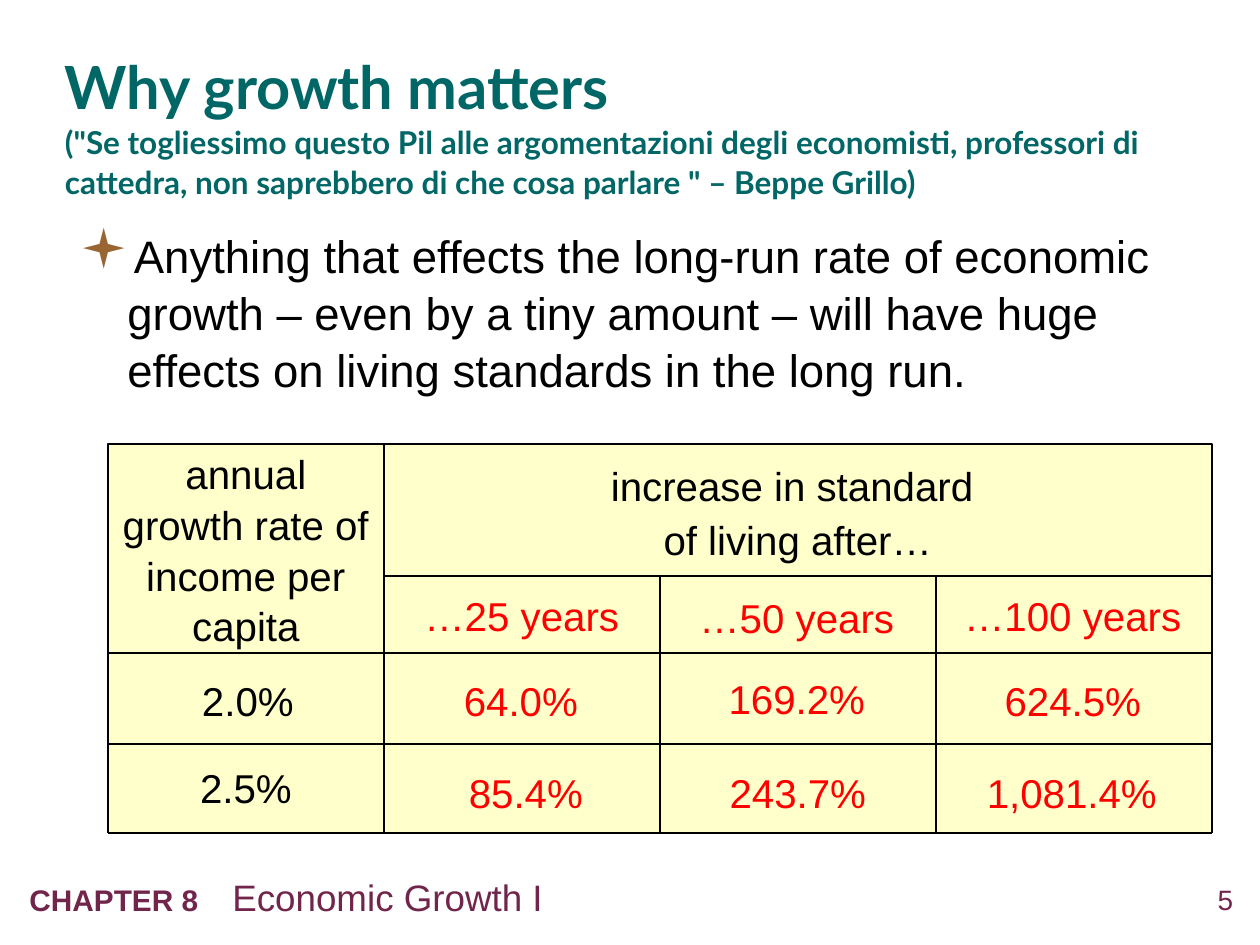
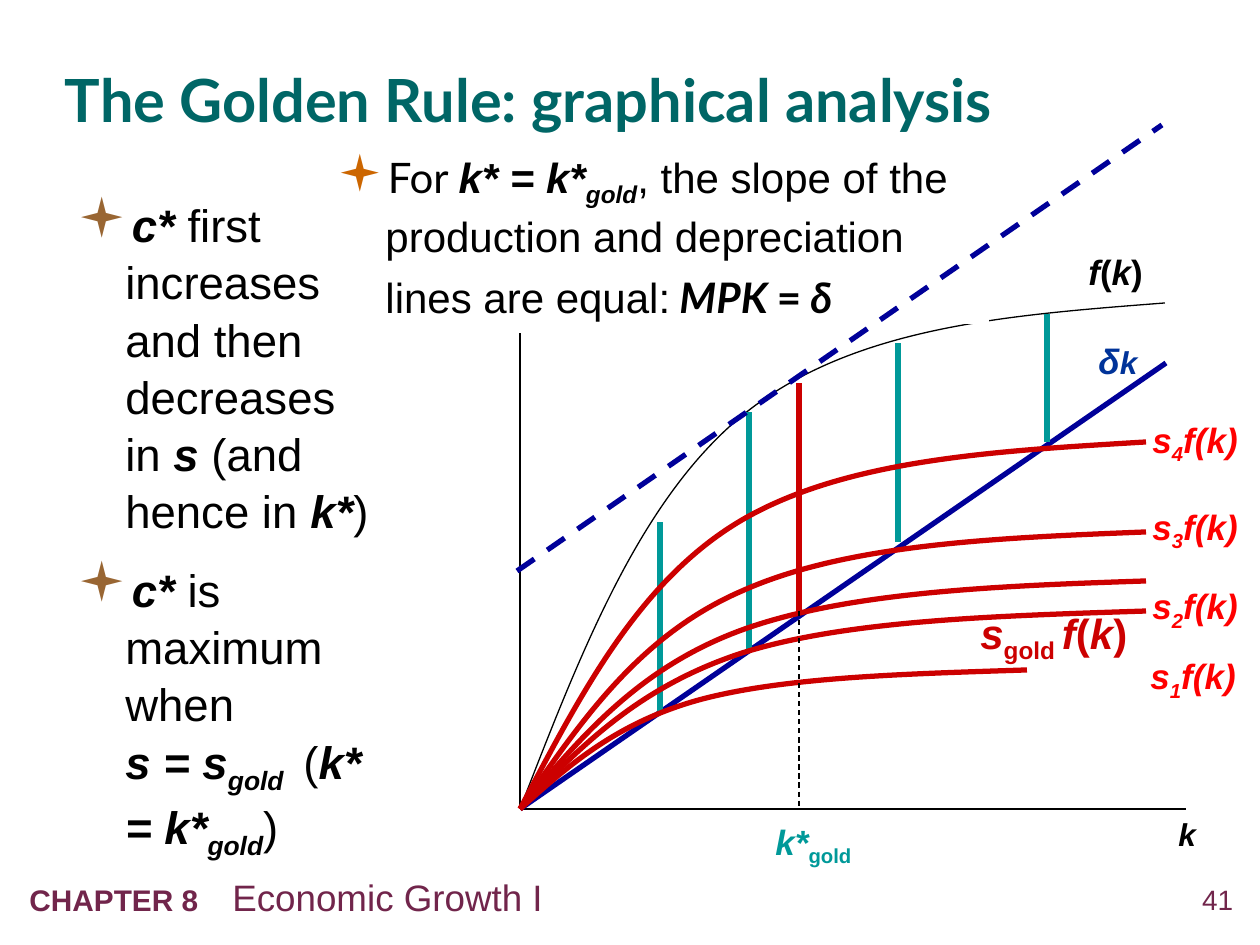
from lxml.etree import SubElement
from pptx import Presentation
from pptx.dml.color import RGBColor
from pptx.enum.dml import MSO_LINE
from pptx.enum.shapes import MSO_CONNECTOR, MSO_SHAPE
from pptx.enum.text import MSO_ANCHOR, PP_ALIGN
from pptx.oxml.ns import qn
from pptx.util import Emu, Pt

SCALE = 914400 / 126
BLACK = RGBColor(0, 0, 0)
WHITE = RGBColor(255, 255, 255)
TEAL_TITLE = RGBColor(0, 102, 102)
PLUM = RGBColor(113, 37, 75)
CREAM = RGBColor(255, 255, 204)
RED = RGBColor(255, 0, 0)
DARK_RED = RGBColor(204, 0, 0)
NAVY = RGBColor(0, 0, 153)
BLUE = RGBColor(0, 51, 153)
TEAL = RGBColor(0, 153, 153)
BROWN = RGBColor(153, 102, 51)
ORANGE = RGBColor(204, 102, 0)

FOOTER = [("CHAPTER 8\t", "b", {"size": 17}), ("Economic Growth I", "")]

GROWTH_TITLE = [
    ("Why growth matters\n", "b"),
    ('("Se togliessimo questo Pil alle argomentazioni degli economisti, professori di '
     'cattedra, non saprebbero di che cosa parlare " – Beppe Grillo)', "b", {"size": 18}),
]
GROWTH_BODY = ("Anything that effects the long-run rate of economic growth – even by a tiny "
               "amount – will have huge effects on living standards in the long run.")
RATE_HEADER = "annual growth rate of income per capita"
INCREASE_HEADER = "increase in standard \nof living after…"
COLUMN_EDGES = [108 + 276 * column for column in range(5)]
TABLE_TOP, YEARS_TOP, FIRST_RATE_TOP, SECOND_RATE_TOP, TABLE_BOTTOM = 444, 576, 653, 744, 833
TABLE_CELLS = [
    (76, [("…25 years", 384, 576), ("…50 years", 659, 578), ("…100 years", 935, 576)]),
    (92, [("2.0%", 110, 653), ("64.0%", 383, 653), ("169.2%", 659, 651), ("624.5%", 935, 653)]),
    (89, [("2.5%", 108, 742), ("85.4%", 388, 747), ("243.7%", 660, 747), ("1,081.4%", 934, 747)]),
]

GOLDEN_TITLE = [("The Golden Rule: graphical analysis", "b")]
GOLDEN_BODY = [
    [("c*", "bi"), (" first increases and then decreases in ", ""), ("s", "bi"),
     (" (and hence in ", ""), ("k*", "bi"), (")", "")],
    [("c*", "bi"), (" is maximum when\n", ""), ("s = s", "bi"), ("gold ", "bi_"), (" (", ""),
     ("k* = k*", "bi"), ("gold", "bi_"), (")", "")],
]
LATO = {"font": "Lato"}
SLOPE_NOTE = [
    ("For ", "", LATO), ("k* = k*", "bi"), ("gold", "bi_"),
    (", the slope of the production and depreciation lines are equal:", ""),
    (" MPK ", "bi", LATO), ("=", "b", LATO), (" δ", "bi", LATO),
    (" ", "b", {"font": "Lato", "size": 28, "color": NAVY}),
]
ORIGIN = (520, 809)
AXIS_ENDS = [(520, 333), (1186, 809)]
PRODUCTION_CURVE = [ORIGIN, (581, 652), (641, 495), (748, 411), (857, 326), (1011, 315), (1165, 303)]
SAVING_CURVES = [
    [ORIGIN, (568, 766), (616, 723), (699, 700), (784, 677), (906, 674), (1027, 670)],
    [ORIGIN, (580, 747), (638, 687), (742, 653), (847, 620), (997, 616), (1146, 611)],
    [ORIGIN, (580, 738), (638, 668), (742, 630), (847, 592), (997, 586), (1146, 581)],
    [ORIGIN, (580, 723), (638, 636), (742, 591), (847, 544), (997, 538), (1146, 532)],
    [ORIGIN, (580, 696), (638, 581), (742, 520), (847, 459), (997, 451), (1146, 442)],
]
CONSUMPTION_GAPS = [(660, 522, 711), (749, 412, 650), (898, 343, 542), (1047, 314, 442)]
GOLDEN_K, GOLDEN_TOP, GOLDEN_BOTTOM = 799, 383, 611
SAVING_LABELS = [("1", 1138, 648), ("2", 1140, 578), ("3", 1140, 499), ("4", 1140, 412)]
GRAPH_LABELS = [
    ([("k", "bi")], (1166, 809, 79, 50), 18, BLACK),
    ([("f", "bi"), ("(", "b"), ("k", "bi"), (")", "b")], (1076, 244, 100, 54), 20, BLACK),
    ([("δ", "bi"), ("k", "bi", {"size": 18})], (1086, 333, 79, 54), 20, BLUE),
    ([("s", "bi"), ("gold ", "b_"), ("f", "bi"), ("(", "b"), ("k", "bi"), (")", "b")],
     (968, 601, 228, 63), 24, DARK_RED),
    ([("k*", "bi"), ("gold", "b_")], (719, 814, 189, 55), 20, TEAL),
] + [
    ([("s", "bi"), (number, "bi_"), ("f(k)", "bi")], (left, top, 120, 55), 20, RED)
    for number, left, top in SAVING_LABELS
]


def px(value):
    return Emu(round(value * SCALE))


def add_run(paragraph, text, flags, size, color, font):
    for index, part in enumerate(text.split("\n")):
        if index:
            paragraph.add_line_break()
        if part:
            run = paragraph.add_run()
            run.text = part
            run.font.name = font
            run.font.size = Pt(size)
            run.font.color.rgb = color
            run.font.bold = "b" in flags
            run.font.italic = "i" in flags
            if "_" in flags:
                run._r.get_or_add_rPr().set("baseline", "-25000")


def add_bullet(paragraph, color):
    properties = paragraph._p.get_or_add_pPr()
    properties.set("marL", str(px(48)))
    properties.set("indent", str(-px(48)))
    SubElement(SubElement(properties, qn("a:buClr")), qn("a:srgbClr")).set("val", str(color))
    SubElement(properties, qn("a:buSzPct")).set("val", "120000")
    SubElement(properties, qn("a:buFont")).set("typeface", "Wingdings")
    SubElement(properties, qn("a:buChar")).set("char", "▪")


def write_text(frame, paragraphs, size=23, color=BLACK, font="Arial", align=PP_ALIGN.LEFT,
               line_spacing=None, space_before=0, bullet=None, tab=None):
    for index, runs in enumerate(paragraphs):
        paragraph = frame.add_paragraph() if index else frame.paragraphs[0]
        paragraph.alignment = align
        paragraph.space_before = Pt(space_before)
        if line_spacing:
            paragraph.line_spacing = line_spacing
        if bullet:
            add_bullet(paragraph, bullet)
        if tab:
            tabs = SubElement(paragraph._p.get_or_add_pPr(), qn("a:tabLst"))
            stop = SubElement(tabs, qn("a:tab"))
            stop.set("pos", str(px(tab)))
            stop.set("algn", "l")
        for text, flags, *overrides in runs:
            style = {"size": size, "color": color, "font": font, **(overrides[0] if overrides else {})}
            add_run(paragraph, text, flags, **style)


def fill_frame(shape, paragraphs, anchor=MSO_ANCHOR.TOP, inset=True, **style):
    frame = shape.text_frame
    frame.word_wrap = True
    frame.vertical_anchor = anchor
    if not inset:
        frame.margin_left = frame.margin_right = frame.margin_top = frame.margin_bottom = 0
    write_text(frame, paragraphs, **style)


def add_text(slide, box, paragraphs, **style):
    fill_frame(slide.shapes.add_textbox(*map(px, box)), paragraphs, **style)


def add_rectangle(slide, box, fill=None, line=None):
    rectangle = slide.shapes.add_shape(MSO_SHAPE.RECTANGLE, *map(px, box))
    rectangle.shadow.inherit = False
    if fill is None:
        rectangle.fill.background()
    else:
        rectangle.fill.solid()
        rectangle.fill.fore_color.rgb = fill
    if line is None:
        rectangle.line.fill.background()
    else:
        rectangle.line.color.rgb = line
        rectangle.line.width = Pt(1)
    return rectangle


def add_line(slide, start, end, color=BLACK, width=0.75, dashed=False):
    line = slide.shapes.add_connector(MSO_CONNECTOR.STRAIGHT, *map(px, (*start, *end)))
    line.line.color.rgb = color
    line.line.width = Pt(width)
    if dashed:
        line.line.dash_style = MSO_LINE.DASH
    SubElement(line._element.spPr, qn("a:effectLst"))


def add_curve(slide, points, color=BLACK, width=0.75):
    start, *others = [tuple(map(px, point)) for point in points]
    builder = slide.shapes.build_freeform(*start)
    builder.add_line_segments(others, close=False)
    curve = builder.convert_to_shape()
    segments = list(curve._element.iter(qn("a:lnTo")))
    outline = segments[0].getparent()
    for first in range(0, len(segments), 3):
        bezier = SubElement(outline, qn("a:cubicBezTo"))
        for segment in segments[first:first + 3]:
            bezier.append(segment[0])
            outline.remove(segment)
    curve.shadow.inherit = False
    curve.fill.background()
    curve.line.color.rgb = color
    curve.line.width = Pt(width)


def add_slide(presentation, title, title_height, number):
    slide = presentation.slides.add_slide(presentation.slide_layouts[6])
    add_text(slide, (1164, 883, 69, 40), [[(number, "")]], inset=False, size=16, color=PLUM,
             align=PP_ALIGN.RIGHT)
    add_text(slide, (17, 869, 1031, 57), [FOOTER], size=21, color=PLUM, tab=203)
    add_text(slide, (65, 32, 1137, title_height), [title], anchor=MSO_ANCHOR.MIDDLE, inset=False,
             size=34, color=TEAL_TITLE, font="Lato", line_spacing=1.05)
    return slide


def add_growth_table(slide):
    left, first, second, third, right = COLUMN_EDGES
    centred = {"anchor": MSO_ANCHOR.MIDDLE, "align": PP_ALIGN.CENTER}
    add_rectangle(slide, (left, TABLE_TOP, right - left, TABLE_BOTTOM - TABLE_TOP), fill=CREAM)
    for height, cells in TABLE_CELLS:
        for text, cell_left, cell_top in cells:
            color = RED if cell_left > left + 2 else BLACK
            add_text(slide, (cell_left, cell_top, 276, height), [[(text, "")]], color=color,
                     line_spacing=1.05, **centred)
    headers = [(INCREASE_HEADER, first, right, YEARS_TOP, 1.1),
               (RATE_HEADER, left, first, FIRST_RATE_TOP, 1.05)]
    for text, start, end, bottom, spacing in headers:
        header = add_rectangle(slide, (start, TABLE_TOP, end - start, bottom - TABLE_TOP), line=BLACK)
        fill_frame(header, [[(text, "")]], line_spacing=spacing, **centred)
    for y in (TABLE_TOP, FIRST_RATE_TOP, SECOND_RATE_TOP, TABLE_BOTTOM):
        add_line(slide, (left, y), (right, y), width=1)
    for x in (left, right, first):
        add_line(slide, (x, TABLE_TOP), (x, TABLE_BOTTOM), width=1)
    for x in (first, second, third):
        add_line(slide, (x, YEARS_TOP), (x + 276, YEARS_TOP), width=1)
    for x in (second, third):
        add_line(slide, (x, YEARS_TOP), (x, FIRST_RATE_TOP), width=1)
        add_line(slide, (x, FIRST_RATE_TOP), (x, TABLE_BOTTOM), width=1)


def build_growth_slide(presentation):
    slide = add_slide(presentation, GROWTH_TITLE, 183, "5")
    add_text(slide, (67, 219, 1134, 224), [[(GROWTH_BODY, "")]], size=26, line_spacing=1.05,
             space_before=12, bullet=BROWN)
    add_growth_table(slide)


def build_golden_rule_slide(presentation):
    slide = add_slide(presentation, GOLDEN_TITLE, 130, "41")
    add_text(slide, (65, 188, 317, 689), GOLDEN_BODY, size=26, line_spacing=1.05,
             space_before=12, bullet=BROWN)
    for end in AXIS_ENDS:
        add_line(slide, ORIGIN, end)
    add_curve(slide, PRODUCTION_CURVE)
    add_line(slide, ORIGIN, (1166, 363), NAVY, 3)
    for k, top, bottom in CONSUMPTION_GAPS:
        add_line(slide, (k, bottom), (k, top), TEAL, 3)
    for curve in SAVING_CURVES:
        add_curve(slide, curve, DARK_RED, 3)
    add_line(slide, (GOLDEN_K, GOLDEN_BOTTOM), (GOLDEN_K, GOLDEN_TOP), DARK_RED, 3)
    add_line(slide, (GOLDEN_K, GOLDEN_BOTTOM), (GOLDEN_K, ORIGIN[1]), dashed=True)
    for runs, box, size, color in GRAPH_LABELS:
        align = PP_ALIGN.CENTER if color == TEAL else PP_ALIGN.LEFT
        add_text(slide, box, [runs], size=size, color=color, align=align)
    note = add_rectangle(slide, (325, 142, 664, 182), fill=WHITE)
    fill_frame(note, [SLOPE_NOTE], size=24, line_spacing=1.05, space_before=11, bullet=ORANGE)
    add_line(slide, (517, 571), (1162, 125), NAVY, 3, dashed=True)


def main():
    presentation = Presentation()
    presentation.slide_width = px(1260)
    presentation.slide_height = px(945)
    build_growth_slide(presentation)
    build_golden_rule_slide(presentation)
    presentation.save("out.pptx")


if __name__ == "__main__":
    main()
